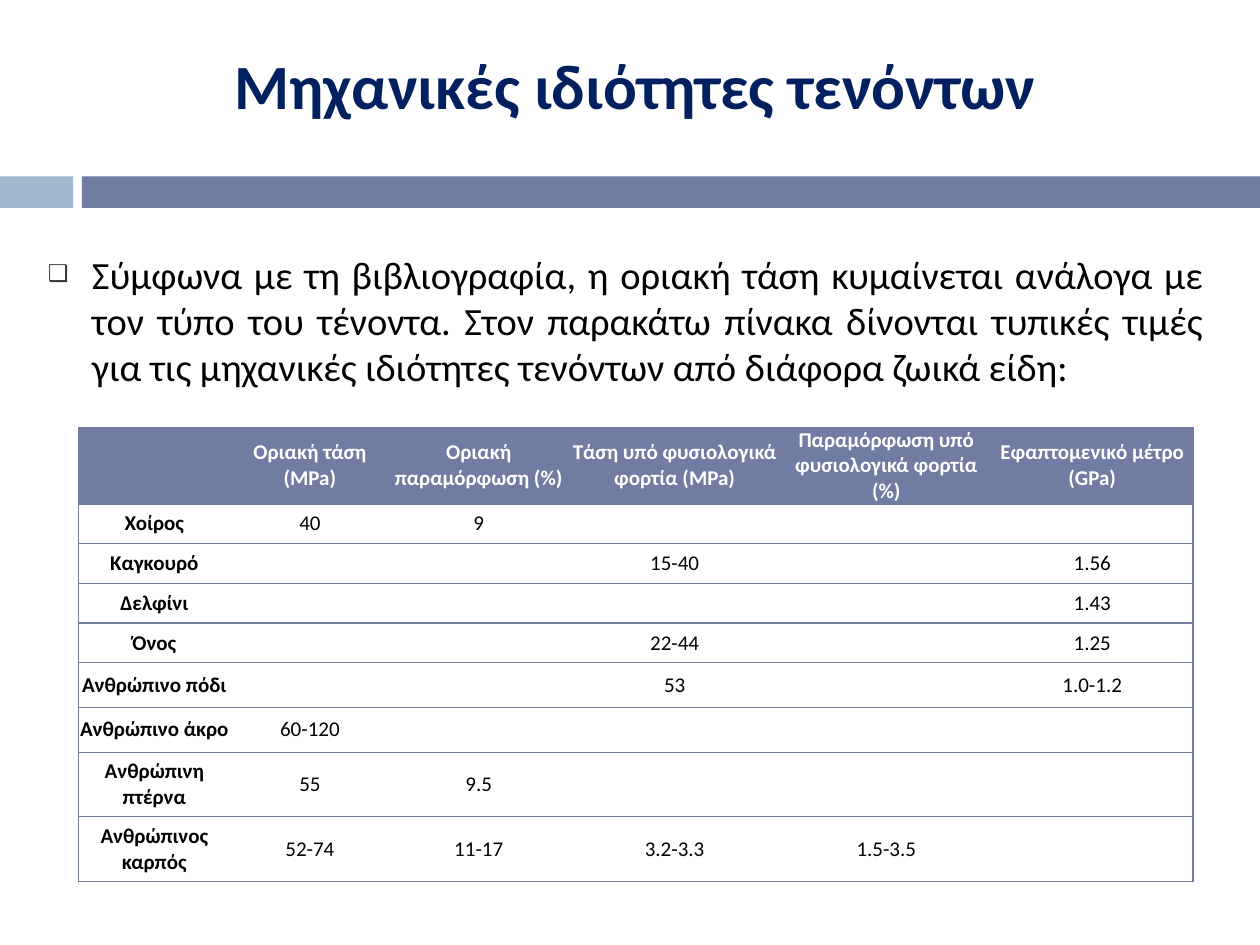
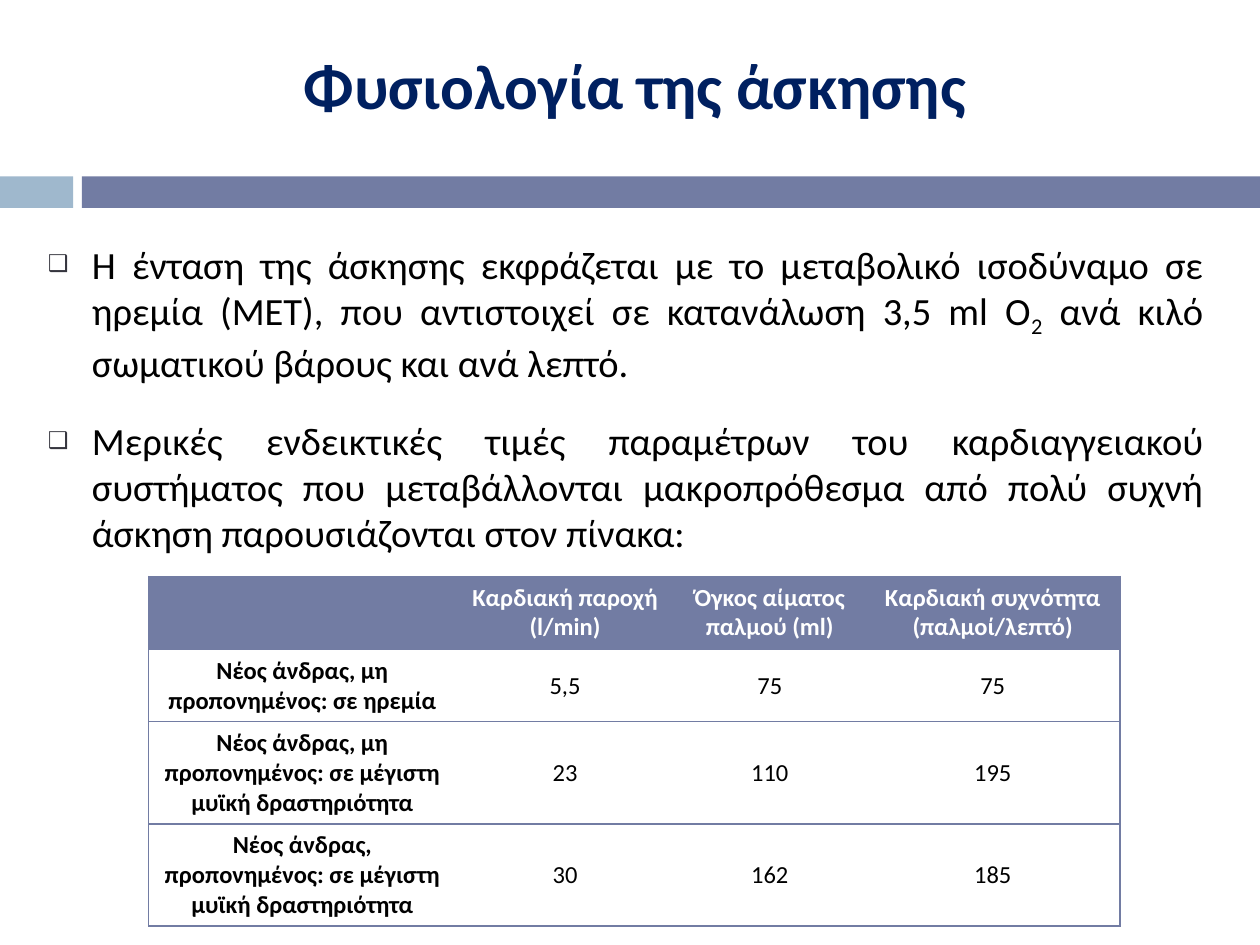
from lxml.etree import SubElement
from pptx import Presentation
from pptx.dml.color import RGBColor
from pptx.enum.shapes import MSO_SHAPE
from pptx.enum.text import MSO_ANCHOR, MSO_AUTO_SIZE, PP_ALIGN
from pptx.oxml.ns import qn
from pptx.util import Inches, Pt

COLORS = {
    "title": "002060",
    "text": "000000",
    "bullet": "35353E",
    "accent": "727CA3",
    "light": "9FB8CD",
    "white": "FFFFFF",
}
FONT = "Calibri"
COLUMNS, ROWS = 100, 75
PLAIN_TABLE = "{2D5ABB26-0587-4C30-8999-92F81FD0307C}"

TENDON_ROWS = [
    ["", "Οριακή τάση (MPa)", "Οριακή παραμόρφωση (%)", "Τάση υπό φυσιολογικά φορτία (MPa)",
     "Παραμόρφωση υπό φυσιολογικά φορτία\n(%)", "Εφαπτομενικό μέτρο\n(GPa)"],
    ["Χοίρος", "40", "9", "", "", ""],
    ["Καγκουρό", "", "", "15-40", "", "1.56"],
    ["Δελφίνι", "", "", "", "", "1.43"],
    ["Όνος", "", "", "22-44", "", "1.25"],
    ["Ανθρώπινο πόδι", "", "", "53", "", "1.0-1.2"],
    ["Ανθρώπινο άκρο", "60-120", "", "", "", ""],
    ["Ανθρώπινη πτέρνα", "55", "9.5", "", "", ""],
    ["Ανθρώπινος καρπός", "52-74", "11-17", "3.2-3.3", "1.5-3.5", ""],
]
EXERCISE_ROWS = [
    ["", "Καρδιακή παροχή (l/min)", "Όγκος αίματος παλμού (ml)",
     "Καρδιακή συχνότητα (παλμοί/λεπτό)"],
    ["Νέος άνδρας, μη προπονημένος: σε ηρεμία", "5,5", "75", "75"],
    ["Νέος άνδρας, μη προπονημένος: σε μέγιστη μυϊκή δραστηριότητα", "23", "110", "195"],
    ["Νέος άνδρας, προπονημένος: σε μέγιστη μυϊκή δραστηριότητα", "30", "162", "185"],
]


class Deck:
    """Hold the shared style and the current slide."""

    def __init__(self):
        """Open an empty 10 by 7.5 inch presentation."""
        self.presentation = Presentation()
        self.presentation.slide_width = Inches(10)
        self.presentation.slide_height = Inches(7.5)
        self.slide = None

    def across(self, columns):
        """Turn grid columns into a length."""
        return round(self.presentation.slide_width * columns / COLUMNS)

    def down(self, rows):
        """Turn grid rows into a length."""
        return round(self.presentation.slide_height * rows / ROWS)

    def box(self, left, top, width, height):
        """Turn a grid box into lengths."""
        return self.across(left), self.down(top), self.across(width), self.down(height)

    def place(self, shape, *grid_box):
        """Move a shape to a grid box."""
        shape.left, shape.top, shape.width, shape.height = self.box(*grid_box)

    def style(self, paragraph, size, color, bold=False):
        """Format a paragraph and its runs alike."""
        for part in (paragraph, *paragraph.runs):
            part.font.name = FONT
            part.font.size = Pt(size)
            part.font.bold = bold
            part.font.color.rgb = RGBColor.from_string(COLORS[color])

    def add_slide(self, title):
        """Start a slide with its title and two bands."""
        self.slide = self.presentation.slides.add_slide(self.presentation.slide_layouts[1])
        self.band(0, 5.8, "light")
        self.band(6.5, 93.5, "accent")
        shape = self.slide.shapes.title
        self.place(shape, 7.9, 3.2, 85, 11.7)
        frame = shape.text_frame
        frame.text = title
        frame.vertical_anchor = MSO_ANCHOR.TOP
        frame.auto_size = MSO_AUTO_SIZE.NONE
        paragraph = frame.paragraphs[0]
        paragraph.alignment = PP_ALIGN.CENTER
        self.style(paragraph, 36, "title", True)

    def band(self, left, width, color):
        """Draw one part of the band below the title."""
        shape = self.slide.shapes.add_shape(MSO_SHAPE.RECTANGLE, *self.box(left, 14, width, 2.5))
        shape.shadow.inherit = False
        shape.fill.solid()
        shape.fill.fore_color.rgb = RGBColor.from_string(COLORS[color])
        shape.line.fill.background()

    def bullets(self, top, items):
        """Fill the body; every second piece of an item is a subscript."""
        shape = self.slide.placeholders[1]
        self.place(shape, 2.8, top, 93.7, 54.3)
        frame = shape.text_frame
        frame.auto_size = MSO_AUTO_SIZE.NONE
        for index, pieces in enumerate(items):
            paragraph = frame.add_paragraph() if index else frame.paragraphs[0]
            for position, piece in enumerate(pieces):
                run = paragraph.add_run()
                run.text = piece
                if position % 2:
                    run._r.get_or_add_rPr().set("baseline", "-25000")
            paragraph.alignment = PP_ALIGN.JUSTIFY
            paragraph.space_before = Pt(0)
            paragraph.space_after = Pt(18)
            self.mark(paragraph)
            self.style(paragraph, 22, "text")

    def mark(self, paragraph):
        """Give a paragraph its square bullet and hanging indent."""
        properties = paragraph._p.get_or_add_pPr()
        properties.set("marL", str(Inches(0.35)))
        properties.set("indent", str(-Inches(0.35)))
        color = SubElement(properties, qn("a:buClr"))
        SubElement(color, qn("a:srgbClr"), val=COLORS["bullet"])
        SubElement(properties, qn("a:buSzPct"), val="60000")
        SubElement(properties, qn("a:buFont"), typeface=FONT)
        SubElement(properties, qn("a:buChar"), char="❑")

    def table(self, left, top, widths, heights, rows, size, margins, header_anchor):
        """Add a table with a filled header and bold row names."""
        frame = self.slide.shapes.add_table(
            len(rows), len(widths), *self.box(left, top, sum(widths), sum(heights)))
        table = frame.table
        table.first_row = table.horz_banding = False
        table._tbl.tblPr.find(qn("a:tableStyleId")).text = PLAIN_TABLE
        for column, width in zip(table.columns, widths):
            column.width = self.across(width)
        for row, height in zip(table.rows, heights):
            row.height = self.down(height)
        for row_index, texts in enumerate(rows):
            header = row_index == 0
            for column_index, text in enumerate(texts):
                cell = table.cell(row_index, column_index)
                cell.text = text
                cell.margin_left = cell.margin_right = Inches(margins[0])
                cell.margin_top = cell.margin_bottom = Inches(margins[1])
                cell.vertical_anchor = header_anchor if header else MSO_ANCHOR.MIDDLE
                first, last = column_index == 0, column_index == len(widths) - 1
                self.borders(cell, "L" * first + "R" * last + "TB")
                cell.fill.solid()
                fill = COLORS["accent" if header else "white"]
                cell.fill.fore_color.rgb = RGBColor.from_string(fill)
                for paragraph in cell.text_frame.paragraphs:
                    paragraph.alignment = PP_ALIGN.CENTER
                    self.style(paragraph, size, "white" if header else "text", header or first)

    def borders(self, cell, sides):
        """Draw thin lines on the given sides of a cell."""
        properties = cell._tc.get_or_add_tcPr()
        for side in sides:
            line = SubElement(properties, qn(f"a:ln{side}"), w=str(Pt(0.79)))
            fill = SubElement(line, qn("a:solidFill"))
            SubElement(fill, qn("a:srgbClr"), val=COLORS["accent"])


def main():
    """Build both slides and save them."""
    deck = Deck()

    deck.add_slide("Μηχανικές ιδιότητες τενόντων")
    deck.bullets(19.4, [[
        "Σύμφωνα με τη βιβλιογραφία, η οριακή τάση κυμαίνεται ανάλογα με τον τύπο του τένοντα. "
        "Στον παρακάτω πίνακα δίνονται τυπικές τιμές για τις μηχανικές ιδιότητες τενόντων "
        "από διάφορα ζωικά είδη:"]])
    deck.table(6.2, 33.9, [12.1, 12.6, 14.2, 16.9, 16.7, 16],
               [6.05] + [3.15] * 4 + [3.55] * 2 + [5.13] * 2,
               TENDON_ROWS, 12, (0, 0), MSO_ANCHOR.MIDDLE)

    deck.add_slide("Φυσιολογία της άσκησης")
    deck.bullets(18.6, [
        ["Η ένταση της άσκησης εκφράζεται με το μεταβολικό ισοδύναμο σε ηρεμία (ΜΕΤ), "
         "που αντιστοιχεί σε κατανάλωση 3,5 ml O", "2",
         " ανά κιλό σωματικού βάρους και ανά λεπτό."],
        ["Μερικές ενδεικτικές τιμές παραμέτρων του καρδιαγγειακού συστήματος που μεταβάλλονται "
         "μακροπρόθεσμα από πολύ συχνή άσκηση παρουσιάζονται στον πίνακα:"]])
    deck.table(11.8, 45.75, [24.4, 17.3, 15.2, 20.2], [5.8, 5.7, 8.1, 8.1],
               EXERCISE_ROWS, 14, (0.1, 0.05), MSO_ANCHOR.TOP)

    deck.presentation.save("out.pptx")


if __name__ == "__main__":
    main()
